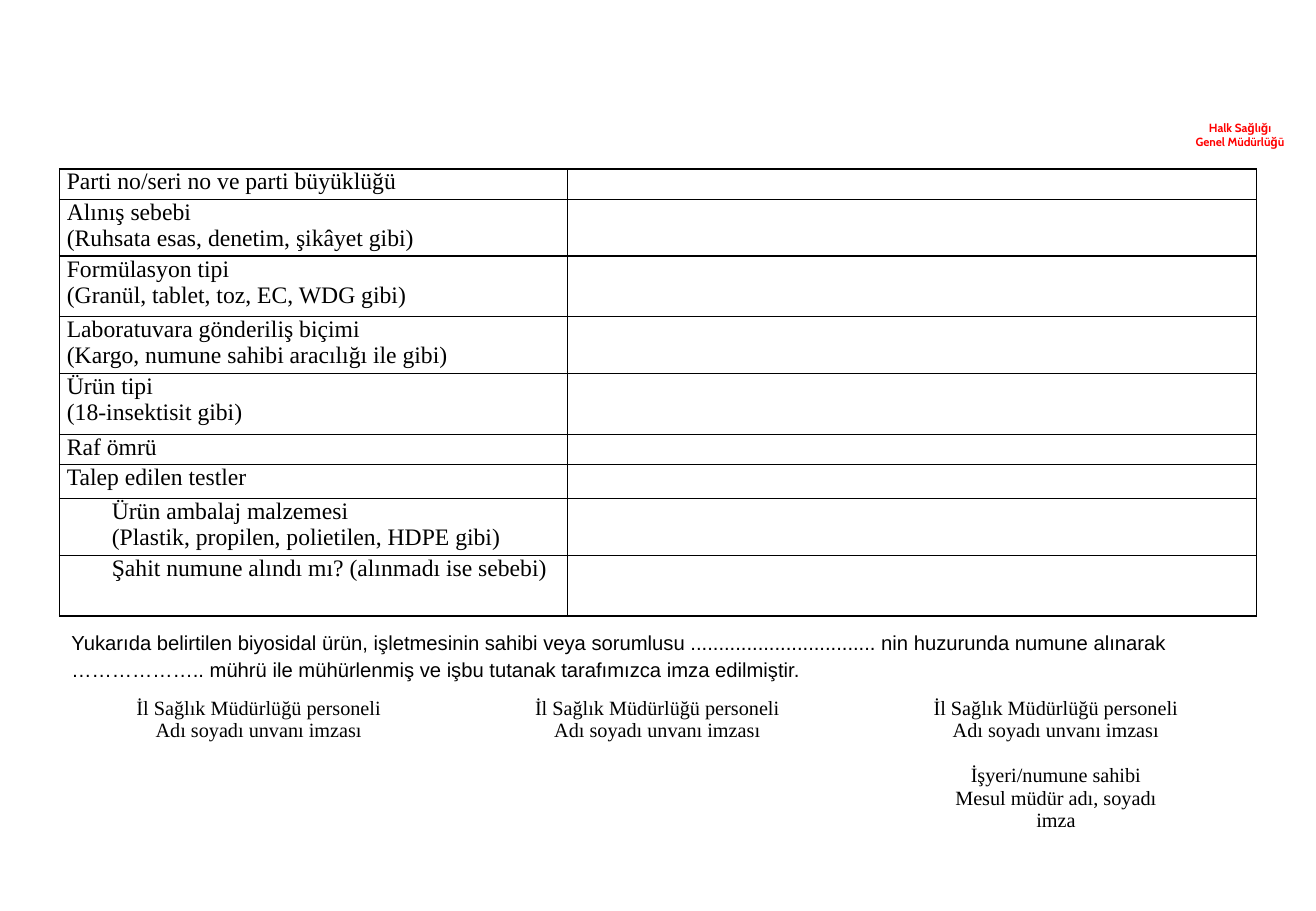
"""Builds the sampling record slide with its form table and signature block."""
from lxml.etree import SubElement
from pptx import Presentation
from pptx.dml.color import RGBColor as RGB
from pptx.enum.text import PP_ALIGN as Align
from pptx.oxml.ns import qn
from pptx.util import Inches, Pt

HEADER = ["Halk Sağlığı", "Genel Müdürlüğü"]
FORM = [
    (0.25, ["Parti no/seri no ve parti büyüklüğü"]),
    (0.46, ["Alınış sebebi", "(Ruhsata esas, denetim, şikâyet gibi)"]),
    (0.5, ["Formülasyon tipi", "(Granül, tablet, toz, EC, WDG gibi)"]),
    (0.46, ["Laboratuvara gönderiliş biçimi", "(Kargo, numune sahibi aracılığı ile gibi)"]),
    (0.5, ["Ürün tipi", "(18-insektisit gibi)"]),
    (0.25, ["Raf ömrü"]),
    (0.28, ["Talep edilen testler"]),
    (0.46, ["Ürün ambalaj malzemesi", "(Plastik, propilen, polietilen, HDPE gibi)"]),
    (0.5, ["Şahit numune alındı mı? (alınmadı ise sebebi)"]),
]
INDENTED_FROM = 7
STATEMENT = (
    "Yukarıda belirtilen biyosidal ürün, işletmesinin sahibi veya sorumlusu "
    "................................. nin huzurunda numune alınarak "
    "……………….. mührü ile mühürlenmiş ve işbu tutanak tarafımızca imza edilmiştir."
)
OFFICER = ["İl Sağlık Müdürlüğü personeli", "Adı soyadı unvanı imzası"]
OWNER = ["İşyeri/numune sahibi", "Mesul müdür adı, soyadı", "imza"]
SIGNATURES = [OFFICER, OFFICER, OFFICER + OWNER]


class Theme:
    ink, accent, paper = RGB(0, 0, 0), RGB(255, 0, 0), RGB(255, 255, 255)
    serif, sans, header = "Times New Roman", "Arial", "Cabin"
    form_size, body_size, header_size = 14, 12, 7
    border_width = Pt(1)


LEFT, WIDTH = 0.49, 9.84
FORM_COLUMNS = [4.18, 5.67]
SIGNATURE_COLUMNS = [WIDTH / len(SIGNATURES)] * len(SIGNATURES)


def write(frame, lines, font, size, color=Theme.ink, align=None, bold=False):
    frame.word_wrap = True
    frame.text = "\n".join(lines)
    for paragraph in frame.paragraphs:
        paragraph.alignment = align
        for run in paragraph.runs:
            run.font.name, run.font.size, run.font.bold = font, Pt(size), bold
            run.font.color.rgb = color
        if not paragraph.runs:
            SubElement(paragraph._p, qn("a:endParaRPr"), sz=str(size * 100))


def outline(cell):
    properties = cell._tc.get_or_add_tcPr()
    for side in ("lnL", "lnR", "lnT", "lnB"):
        line = SubElement(properties, qn(f"a:{side}"), w=str(Theme.border_width))
        fill = SubElement(line, qn("a:solidFill"))
        SubElement(fill, qn("a:srgbClr"), val=str(Theme.ink))


def add_grid(slide, top, columns, rows, bordered):
    table = slide.shapes.add_table(
        len(rows), len(columns), Inches(LEFT), Inches(top), Inches(WIDTH), Inches(sum(rows))
    ).table
    table.first_row = table.horz_banding = False
    for column, width in zip(table.columns, columns):
        column.width = Inches(width)
    for row, height in zip(table.rows, rows):
        row.height = Inches(height)
    for cell in table.iter_cells():
        cell.margin_left = cell.margin_right = Inches(0.06)
        cell.margin_top = cell.margin_bottom = 0
        if bordered:
            outline(cell)
        cell.fill.background()
    return table


def add_header(slide):
    header = slide.shapes.add_textbox(Inches(9.64), Inches(0.99), Inches(1.13), Inches(0.24))
    header.fill.solid()
    header.fill.fore_color.rgb = Theme.paper
    frame = header.text_frame
    frame.margin_left = frame.margin_right = frame.margin_top = frame.margin_bottom = 0
    write(frame, HEADER, Theme.header, Theme.header_size, Theme.accent, Align.CENTER, True)


def add_form(slide):
    form = add_grid(slide, 1.39, FORM_COLUMNS, [height for height, _ in FORM], True)
    for index, (_, label) in enumerate(FORM):
        indented = index >= INDENTED_FROM
        align = Align.LEFT if indented else Align.JUSTIFY
        for cell, lines in zip(form.rows[index].cells, (label, [])):
            write(cell.text_frame, lines, Theme.serif, Theme.form_size, align=align)
        if indented:
            for paragraph in form.cell(index, 0).text_frame.paragraphs:
                paragraph._p.get_or_add_pPr().set("indent", str(Inches(0.37)))


def add_statement(slide):
    statement = slide.shapes.add_textbox(Inches(LEFT), Inches(5.12), Inches(WIDTH), Inches(0.5))
    write(statement.text_frame, [STATEMENT], Theme.sans, Theme.body_size)
    statement.text_frame.paragraphs[0].line_spacing = 1.1


def add_signatures(slide):
    signatures = add_grid(slide, 5.74, SIGNATURE_COLUMNS, [1.31], False)
    for cell, lines in zip(signatures.iter_cells(), SIGNATURES):
        write(cell.text_frame, lines, Theme.serif, Theme.body_size, align=Align.CENTER)
    owner = signatures.cell(0, 2).text_frame.paragraphs[len(OFFICER)]
    owner.space_before = Pt(13.3)


def main():
    deck = Presentation()
    deck.slide_width, deck.slide_height = Inches(10.83), Inches(7.5)
    slide = deck.slides.add_slide(deck.slide_layouts[6])
    add_header(slide)
    add_form(slide)
    add_signatures(slide)
    add_statement(slide)
    deck.save("out.pptx")


if __name__ == "__main__":
    main()
